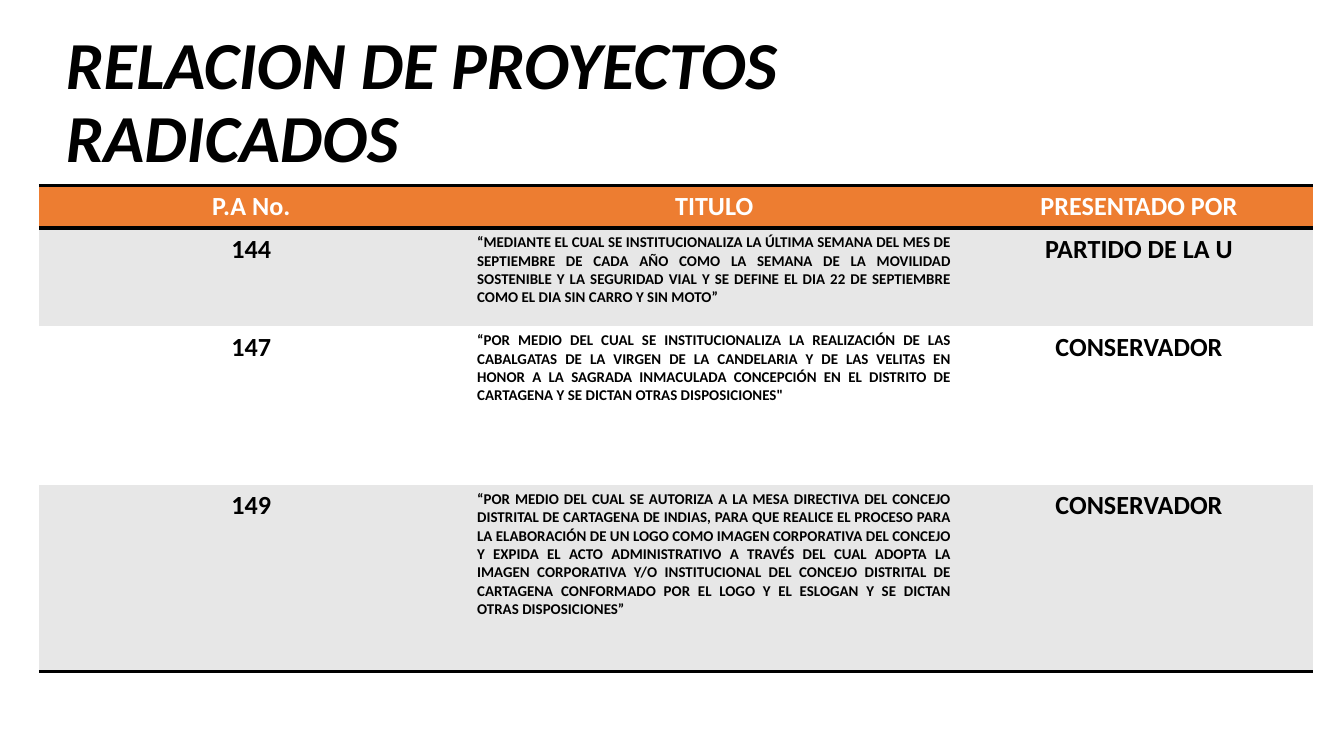
"""Builds the slide that lists the projects filed with the council."""
from dataclasses import dataclass

from lxml import etree
from pptx import Presentation
from pptx.dml.color import RGBColor
from pptx.enum import text
from pptx.oxml import ns
from pptx.util import Inches, Pt


@dataclass(frozen=True)
class Theme:
    """Colours, font, type sizes and table style of the slide."""
    font: str = "Calibri"
    ink: str = "000000"
    paper: str = "FFFFFF"
    accent: str = "ED7D31"
    band: str = "E7E7E7"
    title_size: int = 36
    label_size: int = 14
    summary_size: int = 8
    rule_width: int = 2
    plain_style: str = "{2D5ABB26-0587-4C30-8999-92F81FD0307C}"


@dataclass(frozen=True)
class Project:
    """One filed project."""
    number: str
    summary: str
    sponsor: str


THEME = Theme()
HEADINGS = ("P.A No.", "TITULO", "PRESENTADO POR")
COLUMN_WIDTHS = (3.16, 3.73, 2.59)
ROW_HEIGHTS = (0.3, 0.73, 1.18, 1.39)
PROJECTS = (
    Project("144", "“MEDIANTE EL CUAL SE INSTITUCIONALIZA LA ÚLTIMA SEMANA DEL MES DE "
            "SEPTIEMBRE DE CADA AÑO COMO LA SEMANA DE LA MOVILIDAD SOSTENIBLE Y LA "
            "SEGURIDAD VIAL Y SE DEFINE EL DIA 22 DE SEPTIEMBRE COMO EL DIA SIN CARRO "
            "Y SIN MOTO”", "PARTIDO DE LA U"),
    Project("147", "“POR MEDIO DEL CUAL SE INSTITUCIONALIZA LA REALIZACIÓN DE LAS "
            "CABALGATAS DE LA VIRGEN DE LA CANDELARIA Y DE LAS VELITAS EN HONOR A LA "
            "SAGRADA INMACULADA CONCEPCIÓN EN EL DISTRITO DE CARTAGENA Y SE DICTAN "
            'OTRAS DISPOSICIONES"', "CONSERVADOR"),
    Project("149", "“POR MEDIO DEL CUAL SE AUTORIZA A LA MESA DIRECTIVA DEL CONCEJO "
            "DISTRITAL DE CARTAGENA DE INDIAS, PARA QUE REALICE EL PROCESO PARA LA "
            "ELABORACIÓN DE UN LOGO COMO IMAGEN CORPORATIVA DEL CONCEJO Y EXPIDA EL "
            "ACTO ADMINISTRATIVO A TRAVÉS DEL CUAL ADOPTA LA IMAGEN CORPORATIVA Y/O "
            "INSTITUCIONAL DEL CONCEJO DISTRITAL DE CARTAGENA CONFORMADO POR EL LOGO "
            "Y EL ESLOGAN Y SE DICTAN OTRAS DISPOSICIONES”", "CONSERVADOR"),
)


def format_runs(paragraph, size: int, color: str, italic: bool = False) -> None:
    """Apply the bold theme font to every run."""
    for run in paragraph.runs:
        run.font.name = THEME.font
        run.font.size = Pt(size)
        run.font.bold = True
        run.font.italic = italic
        run.font.color.rgb = RGBColor.from_string(color)


def rule_cell(cell, sides: str) -> None:
    """Draw a rule along the given sides of a cell."""
    properties = cell._tc.get_or_add_tcPr()
    for side in sides:
        border = etree.SubElement(properties, ns.qn(f"a:ln{side}"), w=str(Pt(THEME.rule_width)))
        fill = etree.SubElement(border, ns.qn("a:solidFill"))
        etree.SubElement(fill, ns.qn("a:srgbClr"), val=THEME.ink)


def fill_cell(cell, wording: str, row: int, is_summary: bool) -> None:
    """Write and format one cell of the table."""
    is_heading = row == 0
    cell.text_frame.text = wording
    cell.margin_left = cell.margin_right = Inches(0.1)
    cell.margin_top = cell.margin_bottom = Inches(0.04)
    paragraph = cell.text_frame.paragraphs[0]
    paragraph.alignment = text.PP_ALIGN.JUSTIFY if is_summary else text.PP_ALIGN.CENTER
    format_runs(paragraph, THEME.summary_size if is_summary else THEME.label_size,
                THEME.paper if is_heading else THEME.ink)
    rule_cell(cell, {0: "TB", len(PROJECTS): "B"}.get(row, ""))
    background = THEME.accent if is_heading else THEME.band if row % 2 else THEME.paper
    cell.fill.solid()
    cell.fill.fore_color.rgb = RGBColor.from_string(background)


def add_title(slide) -> None:
    """Place the heading in the title placeholder."""
    title = slide.shapes.title
    title.left, title.top = Inches(0.39), Inches(0.08)
    title.width, title.height = Inches(5.65), Inches(1.39)
    frame = title.text_frame
    frame.text = "RELACION DE PROYECTOS \vRADICADOS"
    frame.word_wrap = True
    frame.auto_size = text.MSO_AUTO_SIZE.NONE
    frame.vertical_anchor = text.MSO_ANCHOR.MIDDLE
    heading = frame.paragraphs[0]
    heading.alignment = text.PP_ALIGN.LEFT
    heading.line_spacing = 0.9
    format_runs(heading, THEME.title_size, THEME.ink, italic=True)


def add_projects(slide) -> None:
    """Add the table of projects."""
    table = slide.shapes.add_table(
        len(ROW_HEIGHTS), len(COLUMN_WIDTHS), Inches(0.29), Inches(1.38),
        Inches(sum(COLUMN_WIDTHS)), Inches(sum(ROW_HEIGHTS))).table
    table._tbl.tblPr.find(ns.qn("a:tableStyleId")).text = THEME.plain_style
    for column, width in zip(table.columns, COLUMN_WIDTHS):
        column.width = Inches(width)
    for row, height in zip(table.rows, ROW_HEIGHTS):
        row.height = Inches(height)
    entries = [HEADINGS, *((p.number, p.summary, p.sponsor) for p in PROJECTS)]
    for row, entry in enumerate(entries):
        for column, wording in enumerate(entry):
            fill_cell(table.cell(row, column), wording, row, row > 0 and column == 1)


def main() -> None:
    """Build and save the presentation."""
    presentation = Presentation()
    presentation.slide_width = Inches(10)
    presentation.slide_height = presentation.slide_width * 9 // 16
    slide = presentation.slides.add_slide(presentation.slide_layouts[5])
    add_title(slide)
    add_projects(slide)
    presentation.save("out.pptx")


if __name__ == "__main__":
    main()
